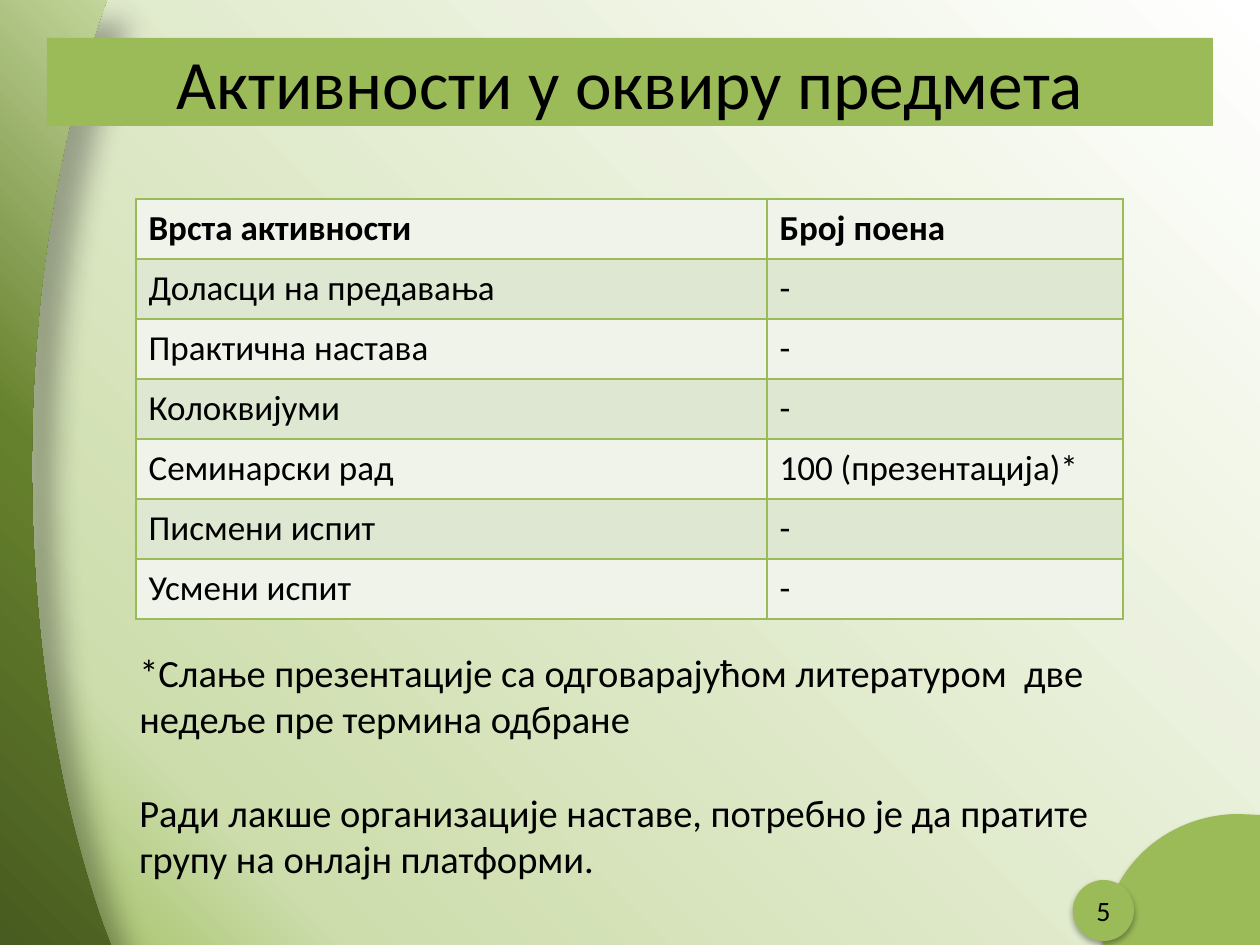
from dataclasses import dataclass

from lxml import etree
from pptx import Presentation
from pptx.dml.color import RGBColor
from pptx.enum.shapes import MSO_SHAPE
from pptx.enum.text import MSO_ANCHOR, MSO_AUTO_SIZE, PP_ALIGN
from pptx.oxml.ns import qn
from pptx.util import Pt

OVAL = MSO_SHAPE.OVAL
MIDDLE = MSO_ANCHOR.MIDDLE
CENTER, LEFT = PP_ALIGN.CENTER, PP_ALIGN.LEFT
NO_FIT = MSO_AUTO_SIZE.NONE
EMU_PER_PX = 914400 / 126
TITLE_ONLY = 5


@dataclass(frozen=True)
class Theme:
    font: str = "Calibri"
    text: str = "000000"
    accent: str = "9BBB59"
    bands: tuple = ("EFF3EA", "DEE7D1")
    background: tuple = ((0, "FFFFFF"), (84, "CDDDAC"), (100, "9BBB59"))
    panel: tuple = ((0, "485B20"), (50, "66812D"), (100, "C3D69B"))
    title_size: float = 39.6
    note_size: int = 22
    table_size: int = 20
    number_size: int = 16


THEME = Theme()
ROWS = [
    ("Врста активности", "Број поена"),
    ("Доласци на предавања", "-"),
    ("Практична настава", "-"),
    ("Колоквијуми", "-"),
    ("Семинарски рад", "100 (презентација)*"),
    ("Писмени испит", "-"),
    ("Усмени испит", "-"),
]
NOTES = [
    "*Слање презентације са одговарајућом литературом  две недеље пре термина одбране",
    "Ради лакше организације наставе, потребно је да пратите групу на онлајн платформи.",
]


def px(*values):
    emus = [round(v * EMU_PER_PX) for v in values]
    return emus[0] if len(emus) == 1 else emus


def rgb(color):
    return RGBColor.from_string(color)


def add_color(parent, color):
    return etree.SubElement(parent, qn("a:srgbClr"), val=color)


def solid(fill, color):
    fill.solid()
    fill.fore_color.rgb = rgb(color)


def gradient(fill, element, stops, angle):
    """Fill with any number of (percent, colour) stops, angle clockwise."""
    fill.gradient()
    grad = next(element.iter(qn("a:gradFill")))
    stop_list = grad.find(qn("a:gsLst"))
    for stop in list(stop_list):
        stop_list.remove(stop)
    for percent, color in stops:
        add_color(etree.SubElement(stop_list, qn("a:gs"), pos=str(percent * 1000)), color)
    grad.find(qn("a:lin")).set("ang", str(angle * 60000))


def shadow(shape, alpha, blur, distance, angle):
    shape.shadow.inherit = False
    effects = next(shape._element.iter(qn("a:effectLst")))
    outer = etree.SubElement(
        effects, qn("a:outerShdw"), blurRad=str(Pt(blur)), dist=str(Pt(distance)),
        dir=str(angle * 60000), algn="ctr", rotWithShape="0")
    etree.SubElement(add_color(outer, "000000"), qn("a:alpha"), val=str(alpha * 1000))


def curve(p0, p1, p2, p3, steps=32):
    """Points of a cubic Bezier curve, without its start."""
    return [
        tuple((1 - t) ** 3 * a + 3 * (1 - t) ** 2 * t * b + 3 * (1 - t) * t * t * c + t ** 3 * d
              for a, b, c, d in zip(p0, p1, p2, p3))
        for t in (i / steps for i in range(1, steps + 1))]


def outline(s, points):
    points = [tuple(px(*p)) for p in points]
    builder = s.shapes.build_freeform(*points[0], scale=1.0)
    builder.add_line_segments(points[1:], close=True)
    shape = builder.convert_to_shape()
    shape.line.fill.background()
    return shape


def write(p, text, size, align=LEFT, bold=False):
    p.alignment = align
    r = p.add_run()
    r.text = text
    r.font.name = THEME.font
    r.font.size = Pt(size)
    r.font.bold = bold
    r.font.color.rgb = rgb(THEME.text)


def add_corner(s, x, y, w, h):
    top = (x + 136, y)
    start = (x, y + h)
    arc = curve(top, (x + 61, y), (x, y + 58), start)
    shape = outline(s, [top, (x + w, y + 1), (x + w, y + h), start] + arc[-2::-1])
    solid(shape.fill, THEME.accent)
    shadow(shape, 32, 3.5, 2.2, 90)


def add_side_panel(s, x, y, w, h):
    upper, waist, lower = (x + 103, y + 11), (x + 32, y + 467), (x + 103, y + 924)
    points = [(x, y), (x + 107, y), upper]
    points += curve(upper, (x + 57, y + 141), (x + 32, y + 301), waist)
    points += curve(waist, (x + 32, y + 634), (x + 57, y + 793), lower)
    shape = outline(s, points + [(x + w, y + h), (x, y + h)])
    gradient(shape.fill, shape._element, THEME.panel, 315)
    shadow(shape, 30, 15, 18, 45)


def add_badge(s, x, y, size):
    shape = s.shapes.add_shape(OVAL, *px(x, y, size, size))
    solid(shape.fill, THEME.accent)
    shape.line.fill.background()
    shadow(shape, 32, 3.5, 2.2, 90)


def add_title(s, text, x, y, w, h):
    title = s.shapes.title
    title.left, title.top, title.width, title.height = px(x, y, w, h)
    solid(title.fill, THEME.accent)
    tf = title.text_frame
    tf.auto_size = NO_FIT
    tf.vertical_anchor = MIDDLE
    write(tf.paragraphs[0], text, THEME.title_size, CENTER)
    s.shapes._spTree.append(title._element)  # in front of the decoration


def add_borders(cell):
    props = cell._tc.get_or_add_tcPr()
    for i, side in enumerate(("lnL", "lnR", "lnT", "lnB")):
        line = etree.Element(qn("a:" + side), w=str(Pt(1)))
        add_color(etree.SubElement(line, qn("a:solidFill")), THEME.accent)
        props.insert(i, line)


def add_points_table(s, rows, x, y, widths, row_height):
    frame = s.shapes.add_table(
        len(rows), len(widths), *px(x, y, sum(widths), row_height * len(rows)))
    table = frame.table
    for column, width in zip(table.columns, widths):
        column.width = px(width)
    for i, values in enumerate(rows):
        table.rows[i].height = px(row_height)
        for j, value in enumerate(values):
            cell = table.cell(i, j)
            solid(cell.fill, THEME.bands[i % 2])
            add_borders(cell)
            cell.vertical_anchor = MIDDLE
            write(cell.text_frame.paragraphs[0], value, THEME.table_size, bold=i == 0)


def add_text(s, paragraphs, size, x, y, w, h, align=LEFT, gap=0):
    tf = s.shapes.add_textbox(*px(x, y, w, h)).text_frame
    tf.word_wrap = True
    for i, text in enumerate(paragraphs):
        p = tf.add_paragraph() if i else tf.paragraphs[0]
        if i:
            p.space_before = Pt(gap)
        write(p, text, size, align)


def main():
    prs = Presentation()
    prs.slide_width, prs.slide_height = px(1260, 945)
    s = prs.slides.add_slide(prs.slide_layouts[TITLE_ONLY])
    gradient(s.background.fill, s._element, THEME.background, 135)
    add_corner(s, 1103, 814, 157, 131)
    add_badge(s, 1073, 880, 61)
    add_side_panel(s, 0, 0, 111, 945)
    add_title(s, "Активности у оквиру предмета", 47, 38, 1166, 88)
    add_points_table(s, ROWS, 136, 199, (631, 356), 60)
    add_text(s, ["5"], THEME.number_size, 1067, 887, 73, 42, CENTER)
    add_text(s, NOTES, THEME.note_size, 127, 643, 997, 246, gap=27)
    prs.save("out.pptx")


if __name__ == "__main__":
    main()
